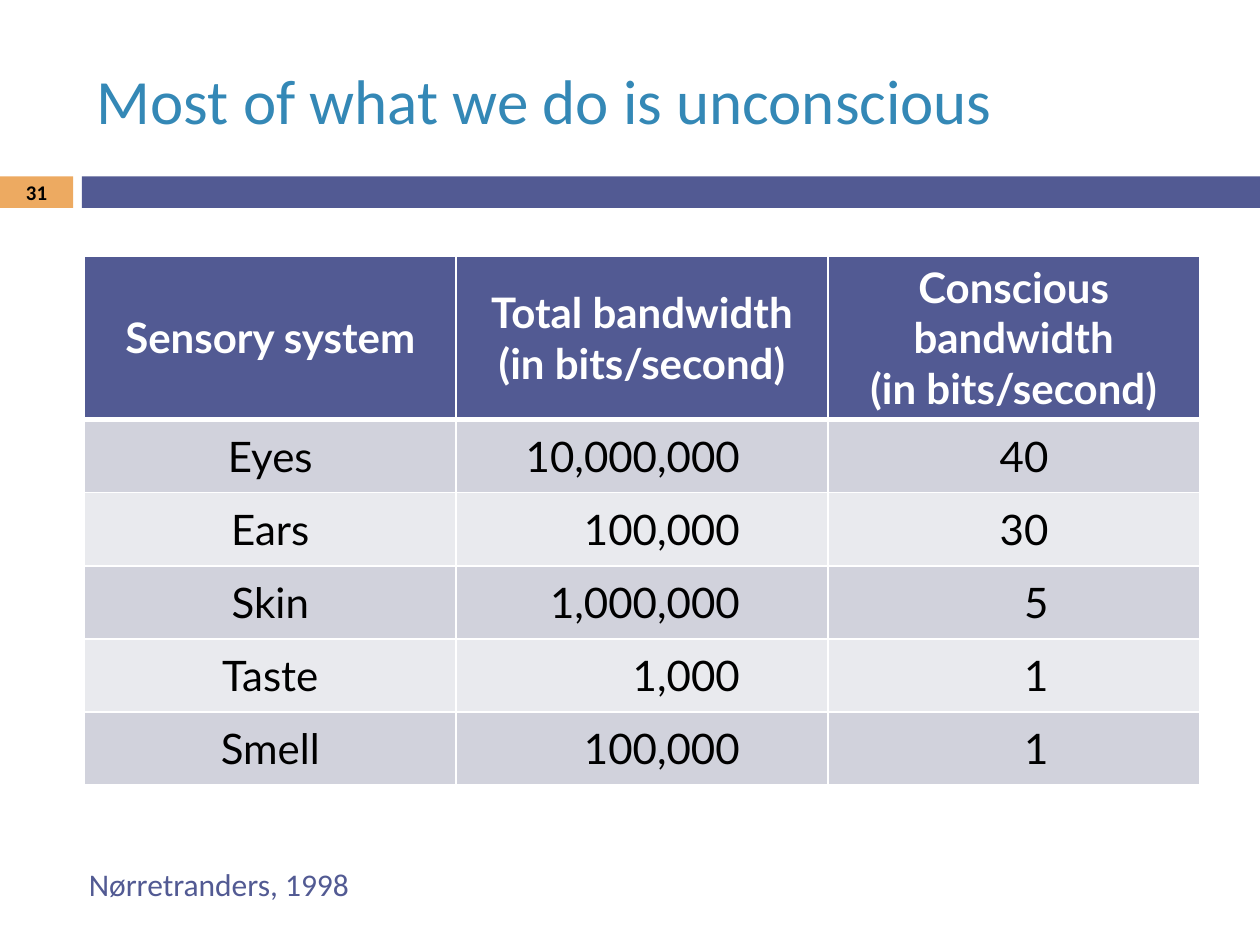
import pptx
import pptx.dml.color
import pptx.enum.shapes
import pptx.enum.text
import pptx.oxml
import pptx.oxml.ns
import pptx.util

WIDTH, HEIGHT = 10, 7.5
INDIGO, AMBER, BLUE = "525A93", "EDAA61", "3488B6"
WHITE, BLACK = "FFFFFF", "000000"
BANDS = ["D1D2DC", "E9EAEE"]
ALIGN = pptx.enum.text.PP_ALIGN
MIDDLE = pptx.enum.text.MSO_ANCHOR.MIDDLE

HEADINGS = [
    "Sensory system",
    "Total bandwidth\n(in bits/second)",
    "Conscious bandwidth\n(in bits/second)",
]
SENSES = [
    ("Eyes", "10,000,000", "40"),
    ("Ears", "100,000", "30"),
    ("Skin", "1,000,000", "5"),
    ("Taste", "1,000", "1"),
    ("Smell", "100,000", "1"),
]
COLUMN_ALIGNS = [ALIGN.CENTER, ALIGN.RIGHT, ALIGN.RIGHT]
COLUMN_INSETS = [0.1, 0.7, 1.2]
COLUMN_WIDTH, HEADING_HEIGHT, SENSE_HEIGHT = 2.95, 1.29, 0.58


def colour(code):
    return pptx.dml.color.RGBColor.from_string(code)


def box(left, top, width, height):
    shares = (left / WIDTH, top / HEIGHT, width / WIDTH, height / HEIGHT)
    return [
        pptx.util.Inches(share * side)
        for share, side in zip(shares, (WIDTH, HEIGHT, WIDTH, HEIGHT))
    ]


def paint(target, code):
    target.fill.solid()
    target.fill.fore_color.rgb = colour(code)


def write(frame, text, size, code, align, bold=False, font="Calibri"):
    frame.text = text
    for paragraph in frame.paragraphs:
        paragraph.alignment = align
        paragraph.font.size = pptx.util.Pt(size)
        paragraph.font.name = font
        paragraph.font.bold = bold
        paragraph.font.color.rgb = colour(code)


def add_bar(slide, place, code):
    bar = slide.shapes.add_shape(
        pptx.enum.shapes.MSO_SHAPE.RECTANGLE, *box(*place))
    paint(bar, code)
    bar.line.fill.background()
    bar.shadow.inherit = False


def add_label(slide, place, text, size, code, align, anchor=MIDDLE, bold=False):
    frame = slide.shapes.add_textbox(*box(*place)).text_frame
    frame.word_wrap = True
    frame.vertical_anchor = anchor
    write(frame, text, size, code, align, bold)


def add_borders(cell, top, bottom):
    properties = cell._tc.get_or_add_tcPr()
    for side, points in (("L", 1), ("R", 1), ("T", top), ("B", bottom)):
        properties.append(pptx.oxml.parse_xml(
            f'<a:ln{side} {pptx.oxml.ns.nsdecls("a")} w="{pptx.util.Pt(points)}">'
            f'<a:solidFill><a:srgbClr val="{WHITE}"/></a:solidFill></a:ln{side}>'))


def add_bandwidths(slide):
    rows, columns = len(SENSES) + 1, len(HEADINGS)
    height = HEADING_HEIGHT + len(SENSES) * SENSE_HEIGHT
    place = box(0.67, 2.03, columns * COLUMN_WIDTH, height)
    table = slide.shapes.add_table(rows, columns, *place).table
    for column in table.columns:
        column.width = pptx.util.Inches(COLUMN_WIDTH)
    for r, texts in enumerate([HEADINGS, *SENSES]):
        heading = r == 0
        table.rows[r].height = pptx.util.Inches(
            HEADING_HEIGHT if heading else SENSE_HEIGHT)
        for c, text in enumerate(texts):
            cell = table.cell(r, c)
            cell.vertical_anchor = MIDDLE
            cell.margin_right = pptx.util.Inches(0.1 if heading else COLUMN_INSETS[c])
            add_borders(cell, 3 if r == 1 else 1, 3 if heading else 1)
            paint(cell, INDIGO if heading else BANDS[(r - 1) % 2])
            write(cell.text_frame, text, 24, WHITE if heading else BLACK,
                  ALIGN.CENTER if heading else COLUMN_ALIGNS[c], heading, "Lato")


def main():
    deck = pptx.Presentation()
    deck.slide_width = pptx.util.Inches(WIDTH)
    deck.slide_height = pptx.util.Inches(HEIGHT)
    slide = deck.slides.add_slide(deck.slide_layouts[6])
    add_bar(slide, (0, 1.4, 0.58, 0.25), AMBER)
    add_bar(slide, (0.65, 1.4, 9.35, 0.25), INDIGO)
    add_label(slide, (0.67, 0.25, 8.92, 1.08), "Most of what we do is unconscious",
              36, BLUE, ALIGN.LEFT)
    add_label(slide, (0.24, 6.82, 2.63, 0.4), "Nørretranders, 1998",
              18, INDIGO, ALIGN.RIGHT, pptx.enum.text.MSO_ANCHOR.TOP)
    add_bandwidths(slide)
    add_label(slide, (0, 1.39, 0.58, 0.27), "31", 11.9, BLACK, ALIGN.CENTER, bold=True)
    deck.save("out.pptx")


if __name__ == "__main__":
    main()
